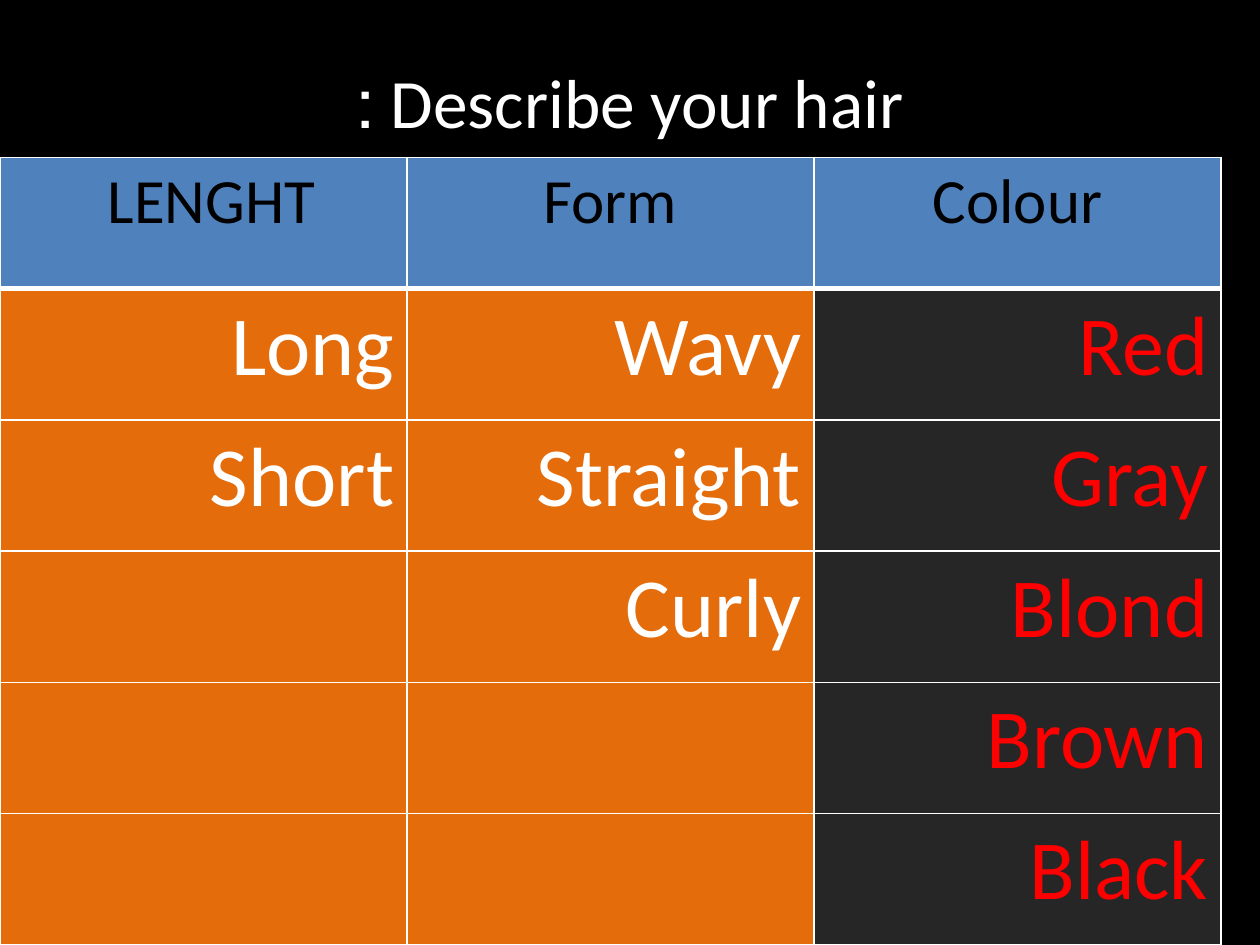
from pptx import Presentation
from pptx import util as u
from pptx.dml.color import RGBColor
from pptx.enum import shapes, text
from pptx.oxml.ns import qn
from lxml import etree

COLORS = {
    "black": "000000",
    "white": "FFFFFF",
    "header": "4F81BD",
    "orange": "E46C0A",
    "dark": "262626",
    "red": "FF0000",
}
HEADERS = ["LENGHT ", "Form", "Colour"]
ROWS = [
    ["Long", "Wavy", "Red"],
    ["Short", "Straight", "Gray"],
    ["", "Curly", "Blond"],
    ["", "", "Brown"],
    ["", "", "Black"],
]
ALIGN = text.PP_ALIGN
BODY_STYLES = [
    ("orange", "white", ALIGN.JUSTIFY),
    ("orange", "white", ALIGN.JUSTIFY),
    ("dark", "red", ALIGN.RIGHT),
]


class SlideBuilder:
    font = "Calibri"

    def __init__(self, page):
        self.page = page

    def color(self, name):
        return RGBColor.from_string(COLORS[name])

    def fill(self, target, name):
        target.fill.solid()
        target.fill.fore_color.rgb = self.color(name)

    def set_text(self, frame, words, size, color, align):
        para = frame.paragraphs[0]
        para.text = words
        para.alignment = align
        para.font.name = self.font
        para.font.size = u.Pt(size)
        para.font.color.rgb = self.color(color)
        para._p.get_or_add_pPr().set("rtl", "1")
        return para

    def title_panel(self, words, width, height):
        box = self.page.shapes.add_shape(
            shapes.MSO_SHAPE.RECTANGLE, 0, 0, width, height)
        box.shadow.inherit = False
        self.fill(box, "black")
        box.line.fill.background()
        frame = box.text_frame
        frame.word_wrap = True
        frame.vertical_anchor = text.MSO_ANCHOR.TOP
        frame.margin_top = u.Inches(0.6)
        para = self.set_text(frame, words, 39.6, "white", ALIGN.CENTER)
        para.line_spacing = 0.8

    def borders(self, cell, bottom):
        properties = cell._tc.get_or_add_tcPr()
        widths = {"lnL": 1, "lnR": 1, "lnT": 1, "lnB": bottom}
        for index, (side, width) in enumerate(widths.items()):
            line = etree.Element(qn(f"a:{side}"), w=str(u.Pt(width)))
            solid = etree.SubElement(line, qn("a:solidFill"))
            etree.SubElement(solid, qn("a:srgbClr"), val=COLORS["white"])
            properties.insert(index, line)

    def cell(self, cell, words, fill, size, color, align, bottom=1):
        self.fill(cell, fill)
        self.borders(cell, bottom)
        if words:
            self.set_text(cell.text_frame, words, size, color, align)

    def table(self, headers, rows, left, top, width, height):
        table = self.page.shapes.add_table(
            len(rows) + 1, len(headers), left, top, width, height).table
        for column, words in enumerate(headers):
            self.cell(table.cell(0, column), words, "header", 36, "black",
                      ALIGN.CENTER, bottom=3)
        for row, values in enumerate(rows, 1):
            for column, words in enumerate(values):
                fill, color, align = BODY_STYLES[column]
                self.cell(table.cell(row, column), words, fill, 48, color, align)


def main():
    deck = Presentation()
    deck.slide_width = u.Inches(10)
    deck.slide_height = u.Inches(7.5)
    builder = SlideBuilder(deck.slides.add_slide(deck.slide_layouts[6]))
    builder.title_panel("Describe your hair :", deck.slide_width, deck.slide_height)
    builder.table(HEADERS, ROWS, 0, u.Inches(1.25), u.Inches(9.69), u.Inches(6.25))
    deck.save("out.pptx")


if __name__ == "__main__":
    main()
